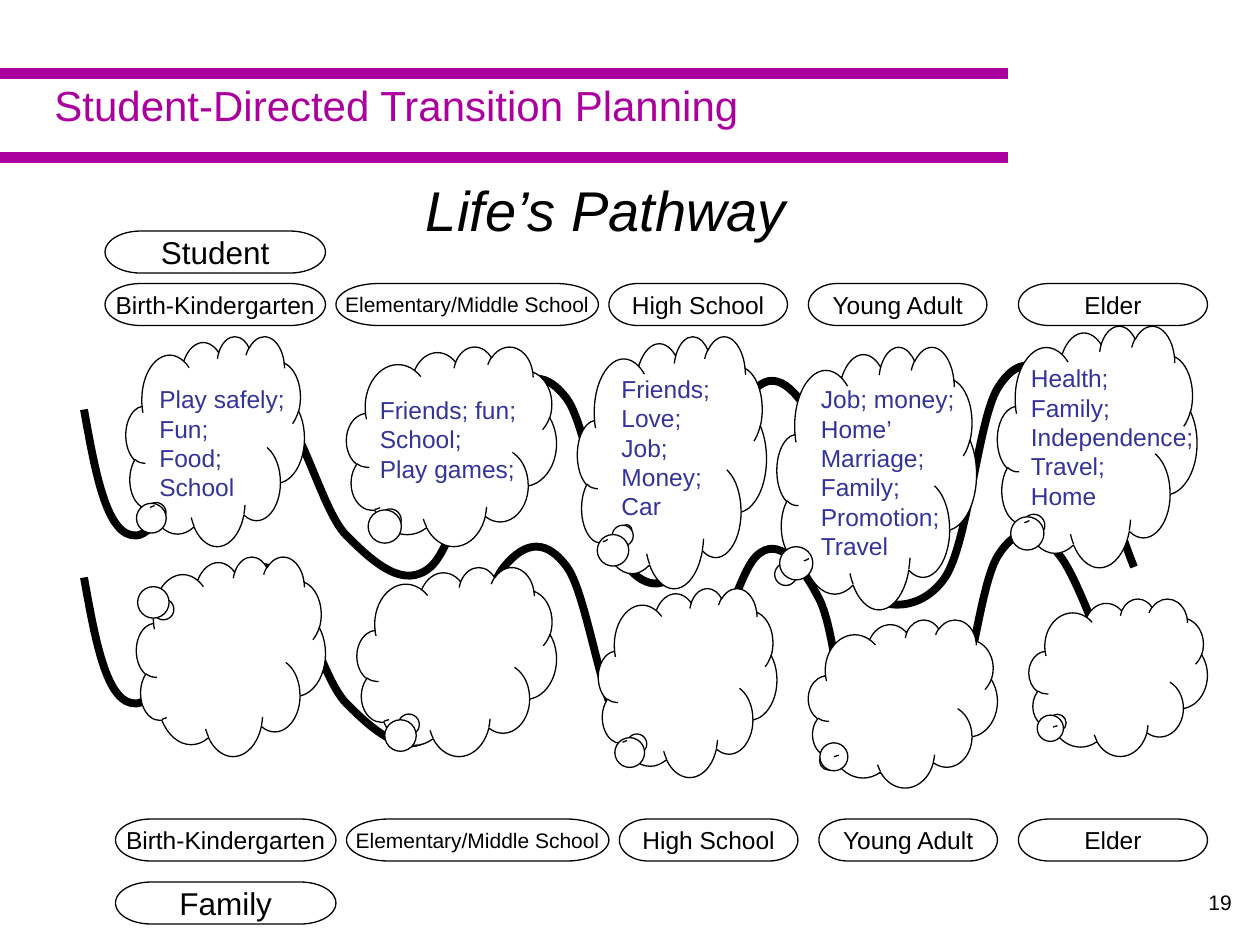
from lxml import etree
from pptx import Presentation
from pptx import util as u
from pptx.dml.color import RGBColor
from pptx.enum import shapes, text
from pptx.oxml.ns import qn

COLORS = {name: RGBColor.from_string(value) for name, value in {
    "banner": "AB009D", "ink": "000000", "paper": "FFFFFF", "goal": "333399",
}.items()}

presentation = Presentation()
presentation.slide_width = u.Inches(10)
presentation.slide_height = u.Inches(7.5)
cell = presentation.slide_width / 120
slide = presentation.slides.add_slide(presentation.slide_layouts[5])


def grid(*values):
    return [u.Emu(round(value * cell)) for value in values]


def write(shape, lines, size, color, align=text.PP_ALIGN.LEFT):
    frame = shape.text_frame
    frame.text = "\n".join(lines)
    frame.word_wrap = False
    for paragraph in frame.paragraphs:
        paragraph.alignment = align
        for run in paragraph.runs:
            run.font.name = "Arial"
            run.font.size = u.Pt(size)
            run.font.color.rgb = COLORS[color]


for row in (7, 15):
    rule = slide.shapes.add_connector(shapes.MSO_CONNECTOR.STRAIGHT, *grid(0, row, 96, row))
    rule.line.color.rgb = COLORS["banner"]
    rule.line.width = u.Pt(6)
    etree.SubElement(rule._element.spPr, qn("a:effectLst"))

banner = slide.shapes.add_textbox(*grid(4, 7, 68, 6))
write(banner, ["Student-Directed Transition Planning"], 24, "banner")

title = slide.shapes.title
title.left, title.top, title.width, title.height = grid(21, 16, 72, 9)
write(title, [" Life’s Pathway"], 32, "ink", text.PP_ALIGN.CENTER)
title.text_frame.word_wrap = True
title.text_frame.auto_size = text.MSO_AUTO_SIZE.NONE
title.text_frame.vertical_anchor = text.MSO_ANCHOR.MIDDLE
title.text_frame.paragraphs[0].line_spacing = 0.8
title.text_frame.paragraphs[0].runs[0].font.italic = True

lead_in, lead_out = (6.4, 14.5), (108, 54)
turns = [(8, 39), (13, 51), (25, 38), (33, 51), (41, 54), (48, 38), (54, 38), (59, 53),
         (65, 54), (72, 37), (78, 41), (82, 56), (90, 55), (95, 37), (101, 37), (108, 54)]
knots = [lead_in, *turns, lead_out]
curve = [turns[0]]
for before, start, end, after in zip(knots, knots[1:], knots[2:], knots[3:]):
    curve.append(tuple(b + (c - a) / 6 for a, b, c in zip(before, start, end)))
    curve.append(tuple(c - (d - b) / 6 for b, c, d in zip(start, end, after)))
    curve.append(end)

for drop in (0, 16):
    points = [grid(x, y + drop) for x, y in curve]
    builder = slide.shapes.build_freeform(*points[0])
    builder.add_line_segments(points[1:], close=False)
    pathway = builder.convert_to_shape()
    segments = list(pathway._element.iter(qn("a:lnTo")))
    outline = segments[0].getparent()
    for index in range(0, len(segments), 3):
        bend = etree.SubElement(outline, qn("a:cubicBezTo"))
        for segment in segments[index:index + 3]:
            bend.append(segment[0])
            outline.remove(segment)
    pathway.shadow.inherit = False
    pathway.fill.background()
    pathway.line.color.rgb = COLORS["ink"]
    pathway.line.width = u.Pt(4.5)

clouds = [
    ((12, 32, 17, 20), (-0.34, 0.35), (14, 36, 14.4),
     ["Play safely;", "Fun;", "Food;", "School"]),
    ((13, 53, 18, 19), (-0.35, -0.23), None, []),
    ((33, 33, 20, 19), (-0.3, 0.38), (35, 37, 15.4),
     ["Friends; fun;", "School;", "Play games;"]),
    ((34, 54, 19, 18), (-0.23, 0.32), None, []),
    ((55, 32, 18, 24), (-0.24, 0.27), (58, 35, 11.2),
     ["Friends;", "Love;", "Job;", "Money;", "Car"]),
    ((57, 56, 17, 18), (-0.28, 0.32), None, []),
    ((74, 33, 19, 25), (-0.47, 0.38), (77, 36, 15.6),
     ["Job; money;", "Home’", "Marriage;", "Family;", "Promotion;", "Travel"]),
    ((77, 59, 18, 16), (-0.38, 0.33), None, []),
    ((95, 31, 19, 23), (-0.32, 0.33), (97, 34, 18),
     ["Health;", "Family;", "Independence;", "Travel;", "Home"]),
    ((98, 57, 17, 15), (-0.34, 0.29), None, []),
]
outlined = []
for place, tail, corner, goals in clouds:
    cloud = slide.shapes.add_shape(shapes.MSO_SHAPE.CLOUD_CALLOUT, *grid(*place))
    cloud.adjustments[0], cloud.adjustments[1] = tail
    outlined.append(cloud)
    if goals:
        left, top, width = corner
        box = slide.shapes.add_textbox(*grid(left, top, width, 1.2 + 2.8 * len(goals)))
        write(box, goals, 14, "goal")

labels = [("Student", 10, 22, 21, 18), ("Family", 11, 84, 21, 18)]
for name, student_left, family_left, width, size in [
    ("Birth-Kindergarten", 10, 11, 21, 14),
    ("Elementary/Middle School", 32, 33, 25, 12),
    ("High School", 58, 59, 17, 14),
    ("Young Adult", 77, 78, 17, 14),
    ("Elder", 97, 97, 18, 14),
]:
    labels += [(name, student_left, 27, width, size), (name, family_left, 78, width, size)]

for name, left, top, width, size in labels:
    label = slide.shapes.add_shape(
        shapes.MSO_SHAPE.FLOWCHART_TERMINATOR, *grid(left, top, width, 4))
    write(label, [name], size, "ink", text.PP_ALIGN.CENTER)
    label.text_frame.vertical_anchor = text.MSO_ANCHOR.MIDDLE
    outlined.append(label)

for shape in outlined:
    shape.shadow.inherit = False
    shape.fill.solid()
    shape.fill.fore_color.rgb = COLORS["paper"]
    shape.line.color.rgb = COLORS["ink"]
    shape.line.width = u.Pt(0.75)

page_number = slide.shapes.add_textbox(*grid(113.9, 84.1, 4.7, 3.6))
write(page_number, ["19"], 12, "ink")

presentation.save("out.pptx")
